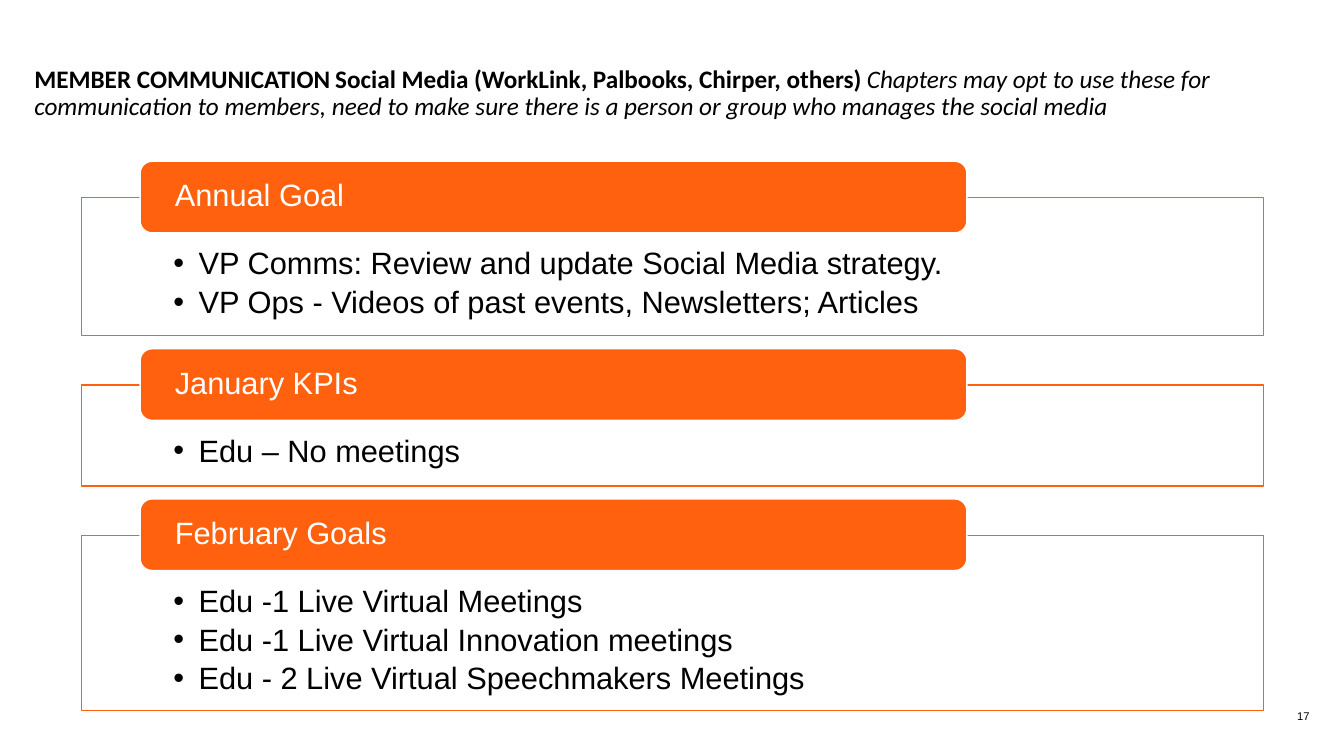
from dataclasses import dataclass

from lxml.etree import SubElement
from pptx import Presentation
from pptx.dml.color import RGBColor
from pptx.enum.shapes import MSO_SHAPE
from pptx.enum.text import MSO_ANCHOR, MSO_AUTO_SIZE, PP_ALIGN
from pptx.oxml.ns import qn
from pptx.util import Pt

TITLE_RUNS = [
    ("MEMBER COMMUNICATION", "bold"),
    (" ", "gap"),
    ("Social Media (WorkLink, Palbooks, Chirper, others)", "bold"),
    (" ", "gap"),
    ("Chapters may opt to use these for communication to members, need to make sure "
     "there is a person or group who manages the social media", "italic"),
]
SECTIONS = [
    ("Annual Goal", [
        "VP Comms: Review and update Social Media strategy.",
        "VP Ops - Videos of past events, Newsletters; Articles",
    ]),
    ("January KPIs", ["Edu – No meetings"]),
    ("February Goals", [
        "Edu -1 Live Virtual Meetings",
        "Edu -1 Live Virtual Innovation meetings",
        "Edu - 2 Live Virtual Speechmakers Meetings",
    ]),
]
PAGE_NUMBER = "17"


@dataclass(frozen=True)
class Theme:
    orange: RGBColor = RGBColor(0xFF, 0x61, 0x0F)
    white: RGBColor = RGBColor(0xFF, 0xFF, 0xFF)
    black: RGBColor = RGBColor(0, 0, 0)
    body_font: str = "Arial"
    title_font: str = "Calibri"
    body_size: int = 22
    title_size: int = 18
    gap_size: int = 12
    number_size: int = 8


THEME = Theme()
EMU_PER_PX = 9144
SLIDE_SIZE = (1333, 750)
TITLE_BOX = (34, 36, 1264, 115)
NUMBER_BOX = (1254, 695, 45, 22)
FRAME_LEFT, FRAME_WIDTH = 81, 1172
BAR_LEFT, BAR_WIDTH, BAR_HEIGHT = 139, 820, 71
FIRST_BAR_TOP = 160
BAR_RISE = 36
SECTION_GAP = 13
FRAME_PADDING, LINE_PITCH = 63, 37
BULLET_INDENT = 25


def px(length):
    return int(length * EMU_PER_PX)


def place(shape, box):
    shape.left, shape.top, shape.width, shape.height = map(px, box)


def set_frame(text_frame, insets, anchor):
    text_frame.word_wrap = True
    text_frame.auto_size = MSO_AUTO_SIZE.NONE
    text_frame.vertical_anchor = anchor
    (text_frame.margin_left, text_frame.margin_top,
     text_frame.margin_right, text_frame.margin_bottom) = map(px, insets)


def set_font(font, name, size, color, bold=False, italic=False):
    font.name, font.size = name, Pt(size)
    font.color.rgb = color
    font.bold, font.italic = bold, italic


def set_paragraph(paragraph, alignment=PP_ALIGN.LEFT, space_after=0):
    paragraph.alignment = alignment
    paragraph.line_spacing = 0.9
    paragraph.space_before = Pt(0)
    paragraph.space_after = Pt(space_after)


def paint(shape, fill, line):
    shape.fill.solid()
    shape.fill.fore_color.rgb = fill
    shape.line.color.rgb = line
    shape.line.width = Pt(1)


def add_bullet(paragraph):
    properties = paragraph._p.get_or_add_pPr()
    properties.set("marL", str(px(BULLET_INDENT)))
    properties.set("indent", str(-px(BULLET_INDENT)))
    SubElement(properties, qn("a:buFont"), typeface="Arial")
    SubElement(properties, qn("a:buChar"), char="•")


def fill_title(title):
    place(title, TITLE_BOX)
    set_frame(title.text_frame, (0, 0, 0, 0), MSO_ANCHOR.MIDDLE)
    paragraph = title.text_frame.paragraphs[0]
    set_paragraph(paragraph)
    for text, style in TITLE_RUNS:
        run = paragraph.add_run()
        run.text = text
        if style == "gap":
            set_font(run.font, THEME.body_font, THEME.gap_size, THEME.black)
        else:
            set_font(run.font, THEME.title_font, THEME.title_size, THEME.black,
                     style == "bold", style == "italic")


def fill_list(frame, goals, top, height):
    place(frame, (FRAME_LEFT, top, FRAME_WIDTH, height))
    paint(frame, THEME.white, THEME.orange)
    text_frame = frame.text_frame
    text_frame.text = "\n".join(goals)
    set_frame(text_frame, (91, 50, 91, 17), MSO_ANCHOR.TOP)
    for paragraph in text_frame.paragraphs:
        add_bullet(paragraph)
        set_paragraph(paragraph, space_after=4)
        set_font(paragraph.runs[0].font, THEME.body_font, THEME.body_size, THEME.black)


def add_bar(slide, heading, top):
    box = map(px, (BAR_LEFT, top, BAR_WIDTH, BAR_HEIGHT))
    bar = slide.shapes.add_shape(MSO_SHAPE.ROUNDED_RECTANGLE, *box)
    bar.shadow.inherit = False
    paint(bar, THEME.orange, THEME.white)
    bar.text_frame.text = heading
    set_frame(bar.text_frame, (31, 0, 31, 0), MSO_ANCHOR.MIDDLE)
    paragraph = bar.text_frame.paragraphs[0]
    set_paragraph(paragraph)
    set_font(paragraph.runs[0].font, THEME.body_font, THEME.body_size, THEME.white)


def add_page_number(slide):
    number = slide.shapes.add_textbox(*map(px, NUMBER_BOX))
    number.text_frame.text = PAGE_NUMBER
    set_frame(number.text_frame, (0, 0, 0, 0), MSO_ANCHOR.BOTTOM)
    paragraph = number.text_frame.paragraphs[0]
    paragraph.alignment = PP_ALIGN.RIGHT
    set_font(paragraph.runs[0].font, THEME.body_font, THEME.number_size, THEME.black)


def main():
    presentation = Presentation()
    presentation.slide_width, presentation.slide_height = map(px, SLIDE_SIZE)
    comparison_layout = presentation.slide_layouts[4]
    slide = presentation.slides.add_slide(comparison_layout)
    title, *frames = slide.placeholders
    fill_title(title)

    bar_top = FIRST_BAR_TOP
    for frame, (heading, goals) in zip(frames, SECTIONS):
        frame_top = bar_top + BAR_RISE
        frame_height = FRAME_PADDING + LINE_PITCH * len(goals)
        fill_list(frame, goals, frame_top, frame_height)
        add_bar(slide, heading, bar_top)
        bar_top = frame_top + frame_height + SECTION_GAP

    for unused in frames[len(SECTIONS):]:
        unused.element.getparent().remove(unused.element)
    add_page_number(slide)
    presentation.save("out.pptx")


if __name__ == "__main__":
    main()
